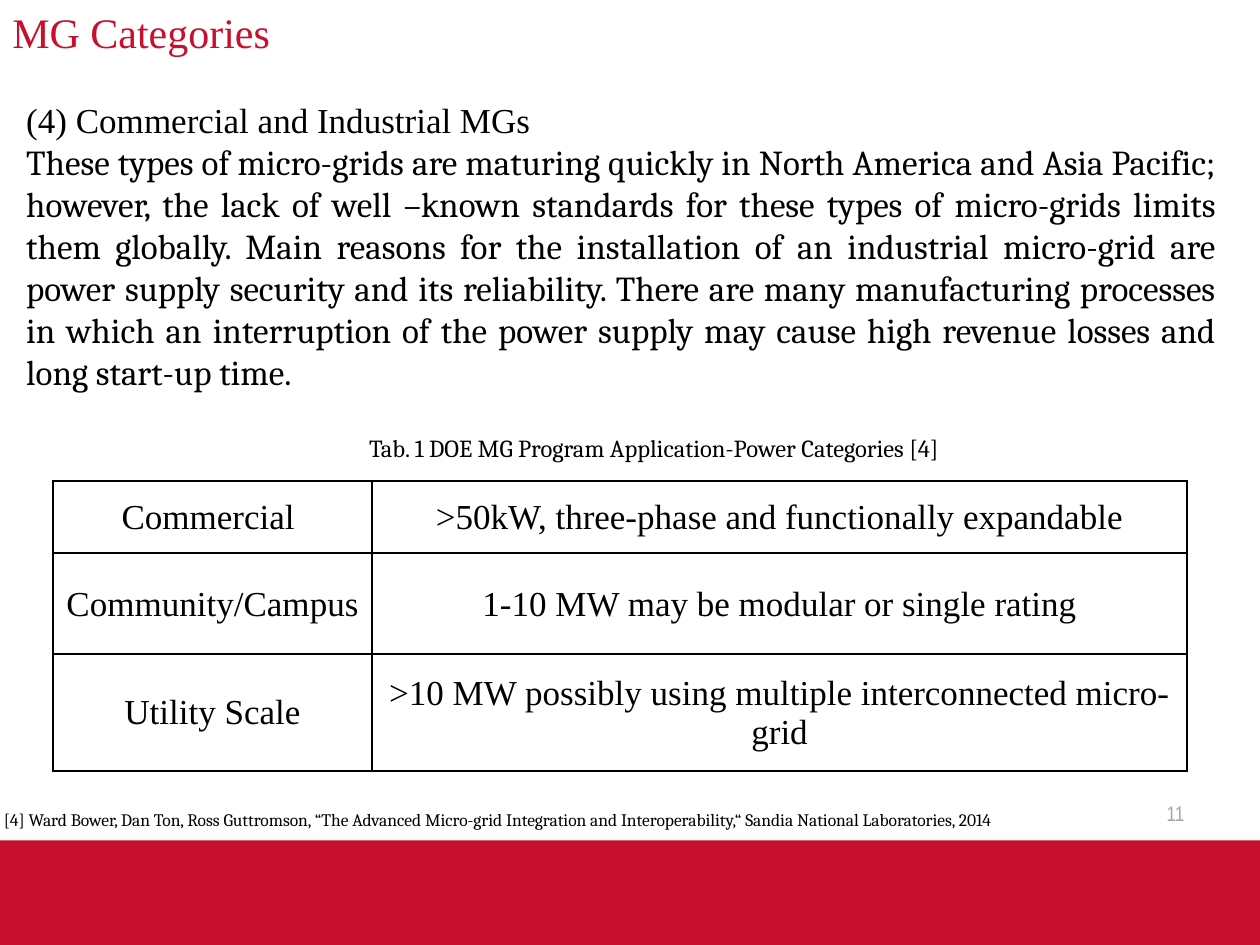
from pptx import Presentation
from pptx.dml.color import RGBColor
from pptx.enum.shapes import MSO_SHAPE
from pptx.enum.text import MSO_ANCHOR, PP_ALIGN
from pptx.oxml import parse_xml
from pptx.oxml.ns import nsdecls
from pptx.util import Cm, Pt

RECT = MSO_SHAPE.RECTANGLE
TOP, MIDDLE = MSO_ANCHOR.TOP, MSO_ANCHOR.MIDDLE
LEFT, CENTER = PP_ALIGN.LEFT, PP_ALIGN.CENTER
RIGHT, JUSTIFY = PP_ALIGN.RIGHT, PP_ALIGN.JUSTIFY

COLORS = {"red": "C8102E", "black": "000000", "white": "FFFFFF", "gray": "ACA39A"}
SERIF, BODY, NARROW = "Times New Roman", "Cambria", "Arial Narrow"

HEADING = "(4) Commercial and Industrial MGs"
PARAGRAPH = (
    "These types of micro-grids are maturing quickly in North America and Asia "
    "Pacific; however, the lack of well –known standards for these types of "
    "micro-grids limits them globally. Main reasons for the installation of an "
    "industrial micro-grid are power supply security and its reliability. There "
    "are many manufacturing processes in which an interruption of the power "
    "supply may cause high revenue losses and long start-up time."
)
CAPTION = "Tab. 1 DOE MG Program Application-Power Categories [4]"
REFERENCE = (
    "[4] Ward Bower, Dan Ton, Ross Guttromson, “The Advanced Micro-grid Integration "
    "and Interoperability,“ Sandia National Laboratories, 2014"
)
CATEGORIES = [
    ("Commercial ", ">50kW, three-phase and functionally expandable"),
    ("Community/Campus", "1-10 MW may be modular or single rating"),
    ("Utility Scale", ">10 MW possibly using multiple interconnected micro-grid"),
]
COL_WIDTHS = (6.43, 16.43)
ROW_HEIGHTS = (1.45, 2.03, 2.36)


def rgb(name):
    return RGBColor.from_string(COLORS[name])


def write(p, text, font=SERIF, size=20, color="black", align=LEFT):
    p.alignment = align
    r = p.add_run()
    r.text = text
    r.font.name = font
    r.font.size = Pt(size)
    r.font.color.rgb = rgb(color)


def add_box(s, box, anchor=TOP, wrap=True):
    tf = s.shapes.add_textbox(*map(Cm, box)).text_frame
    tf.word_wrap = wrap
    tf.vertical_anchor = anchor
    return tf


def add_footer(s, x, y, w, h):
    # Red band, with the page number and the reference above it
    band = s.shapes.add_shape(RECT, Cm(x), Cm(y), Cm(w), Cm(h))
    band.shadow.inherit = False
    band.fill.solid()
    band.fill.fore_color.rgb = rgb("red")
    band.line.fill.background()
    tf = add_box(s, (x + 18.2, y - 1.06, 5.93, 1.02), anchor=MIDDLE)
    write(tf.paragraphs[0], "11", font=NARROW, size=12, color="gray", align=RIGHT)
    tf = add_box(s, (x - 0.17, y - 0.76, 24.13, 0.69))
    write(tf.paragraphs[0], REFERENCE, font=BODY, size=10, align=JUSTIFY)


def add_title(s, *box):
    tf = add_box(s, box, anchor=MIDDLE)
    write(tf.paragraphs[0], "MG Categories", size=24, color="red")


def add_body(s, *box):
    tf = add_box(s, box)
    write(tf.paragraphs[0], HEADING, align=JUSTIFY)
    write(tf.add_paragraph(), PARAGRAPH, font=BODY, align=JUSTIFY)


def set_borders(cell):
    # Borders have to come before the fill in the cell properties
    tcPr = cell._tc.get_or_add_tcPr()
    for i, side in enumerate(("lnL", "lnR", "lnT", "lnB")):
        tcPr.insert(i, parse_xml(
            f'<a:{side} {nsdecls("a")} w="{Pt(1)}"><a:solidFill>'
            f'<a:srgbClr val="{COLORS["black"]}"/></a:solidFill></a:{side}>'))


def add_categories(s, x, y, w, h):
    # Caption above the table
    tf = add_box(s, (x + 6.12, y - 1.1, 12.52, 0.86), wrap=False)
    write(tf.paragraphs[0], CAPTION, font=BODY, size=14)

    # Table of power categories
    table = s.shapes.add_table(len(CATEGORIES), len(COL_WIDTHS),
                               Cm(x), Cm(y), Cm(w), Cm(h)).table
    table.first_row = table.horz_banding = False
    for col, width in zip(table.columns, COL_WIDTHS):
        col.width = Cm(width)
    for row, height, texts in zip(table.rows, ROW_HEIGHTS, CATEGORIES):
        row.height = Cm(height)
        for cell, text in zip(row.cells, texts):
            cell.fill.solid()
            cell.fill.fore_color.rgb = rgb("white")
            cell.margin_left = cell.margin_right = cell.margin_top = Cm(0.03)
            cell.margin_bottom = 0
            cell.vertical_anchor = MIDDLE
            set_borders(cell)
            write(cell.text_frame.paragraphs[0], text, align=CENTER)


def main():
    prs = Presentation()
    prs.slide_width, prs.slide_height = Cm(25.4), Cm(19.05)
    s = prs.slides.add_slide(prs.slide_layouts[6])
    add_footer(s, 0, 16.94, 25.4, 2.11)
    add_body(s, 0.28, 1.86, 24.49, 6.17)
    add_categories(s, 1.07, 9.7, sum(COL_WIDTHS), sum(ROW_HEIGHTS))
    add_title(s, 0, 0, 21.59, 1.27)
    prs.save("out.pptx")


if __name__ == "__main__":
    main()
